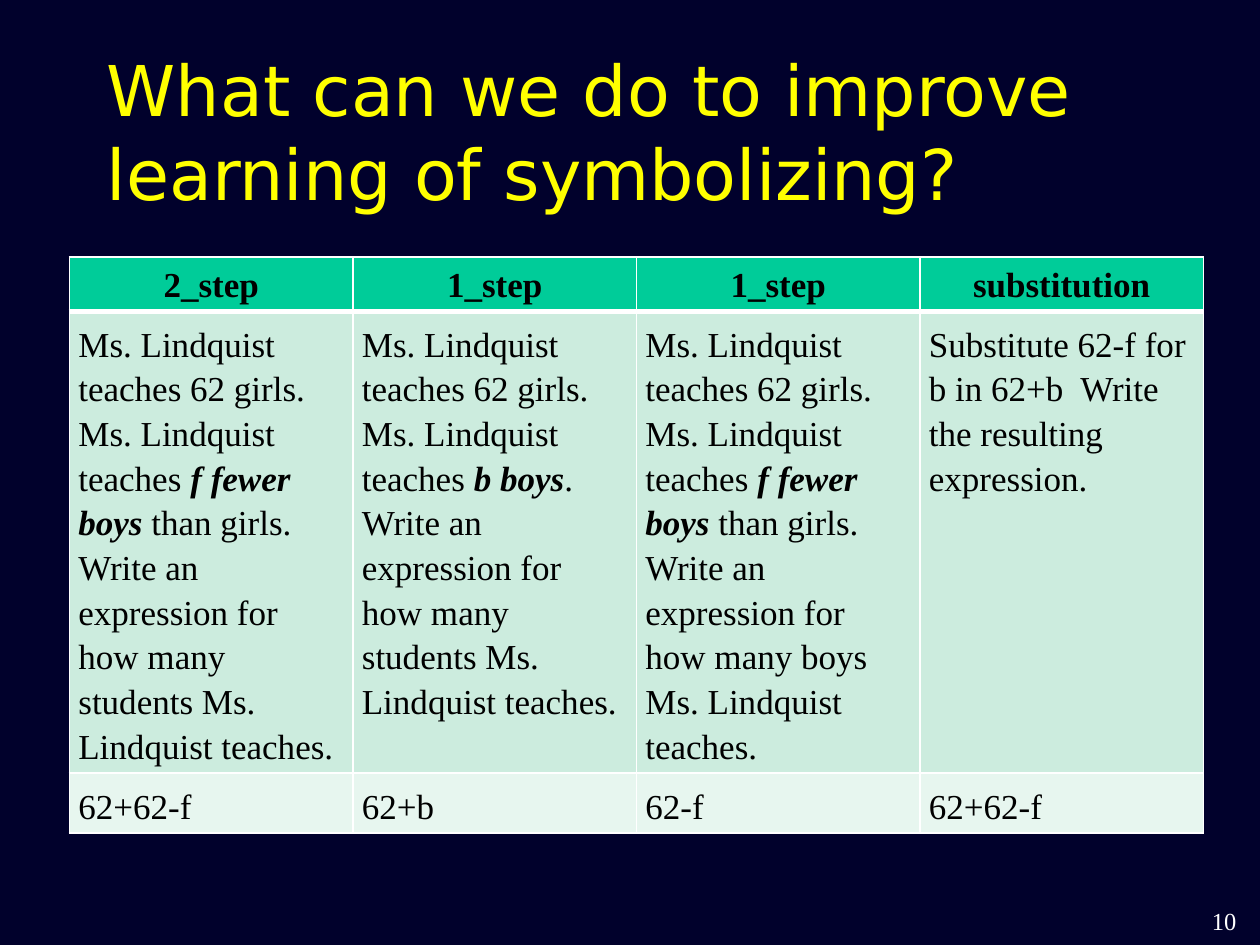
from lxml import etree
from pptx import Presentation
from pptx.dml.color import RGBColor
from pptx.enum.text import MSO_ANCHOR, PP_ALIGN
from pptx.oxml.ns import qn
from pptx.util import Cm, Pt

NAVY = RGBColor(0x01, 0x01, 0x2C)
YELLOW = RGBColor(0xFF, 0xFF, 0x00)
WHITE = RGBColor(0xFF, 0xFF, 0xFF)
BLACK = RGBColor(0x00, 0x00, 0x00)
GREEN = RGBColor(0x00, 0xCC, 0x99)
MINT = RGBColor(0xCC, 0xEC, 0xDE)
PALE = RGBColor(0xE7, 0xF6, 0xEF)
SERIF = "Times New Roman"


def set_font(font, name, size, color):
    font.name, font.size = name, Pt(size)
    font.color.rgb = color


def set_borders(cell, **widths):
    tc_pr = cell._tc.get_or_add_tcPr()
    for side, width in widths.items():
        ln = etree.SubElement(tc_pr, qn(f"a:ln{side}"), w=str(Pt(width)))
        fill = etree.SubElement(ln, qn("a:solidFill"))
        etree.SubElement(fill, qn("a:srgbClr"), val=str(WHITE))


prs = Presentation()
prs.slide_width, prs.slide_height = Cm(25.4), Cm(19.05)
s = prs.slides.add_slide(prs.slide_layouts[5])
s.background.fill.solid()
s.background.fill.fore_color.rgb = NAVY

# Title
title = s.shapes.title
title.left, title.top, title.width, title.height = Cm(1.9), Cm(1.05), Cm(21.6), Cm(3.18)
tf = title.text_frame
tf.text = "What can we do to improve learning of symbolizing?"
tf.vertical_anchor = MSO_ANCHOR.MIDDLE
p = tf.paragraphs[0]
p.alignment = PP_ALIGN.LEFT
set_font(p.font, "DejaVu Sans", 40, YELLOW)

# Table contents: each cell is a list of runs, every second one emphasized
INTRO = "Ms. Lindquist teaches 62 girls.  Ms. Lindquist teaches "
ASK = "  Write an expression for how many {} Ms. Lindquist teaches."
headers = ["2_step", "1_step", "1_step", "substitution"]
problems = [
    [INTRO, "f fewer boys", " than girls." + ASK.format("students")],
    [INTRO, "b boys", "." + ASK.format("students")],
    [INTRO, "f fewer boys", " than girls." + ASK.format("boys")],
    ["Substitute 62-f for b in 62+b  Write the resulting expression."],
]
answers = ["62+62-f", "62+b", "62-f", "62+62-f"]
rows = [
    ([[h] for h in headers], GREEN, Cm(1.06)),
    (problems, MINT, Cm(9.3)),
    ([[a] for a in answers], PALE, Cm(1.2)),
]

# Table
table = s.shapes.add_table(3, 4, Cm(1.4), Cm(5.18), Cm(22.86), Cm(11.56)).table
for column in table.columns:
    column.width = Cm(5.715)
for i, (texts, color, height) in enumerate(rows):
    table.rows[i].height = height
    for j, runs in enumerate(texts):
        cell = table.cell(i, j)
        cell.margin_left = cell.margin_right = cell.margin_top = Cm(0.18)
        cell.margin_bottom = Cm(0.13)
        set_borders(cell, L=1, R=1, T=3 if i == 1 else 1, B=3 if i == 0 else 1)
        cell.fill.solid()
        cell.fill.fore_color.rgb = color
        p = cell.text_frame.paragraphs[0]
        set_font(p.font, SERIF, 20, BLACK)
        p.font.bold = i == 0
        if i == 0:
            p.alignment = PP_ALIGN.CENTER
        else:
            p.line_spacing = 1.15
        for k, text in enumerate(runs):
            r = p.add_run()
            r.text = text
            if k % 2:
                r.font.bold = r.font.italic = True

# Slide number
number = s.shapes.add_textbox(Cm(24.18), Cm(18.14), Cm(1.75), Cm(0.86))
tf = number.text_frame
tf.word_wrap = True
tf.text = "10"
set_font(tf.paragraphs[0].font, SERIF, 14, WHITE)

prs.save("out.pptx")
